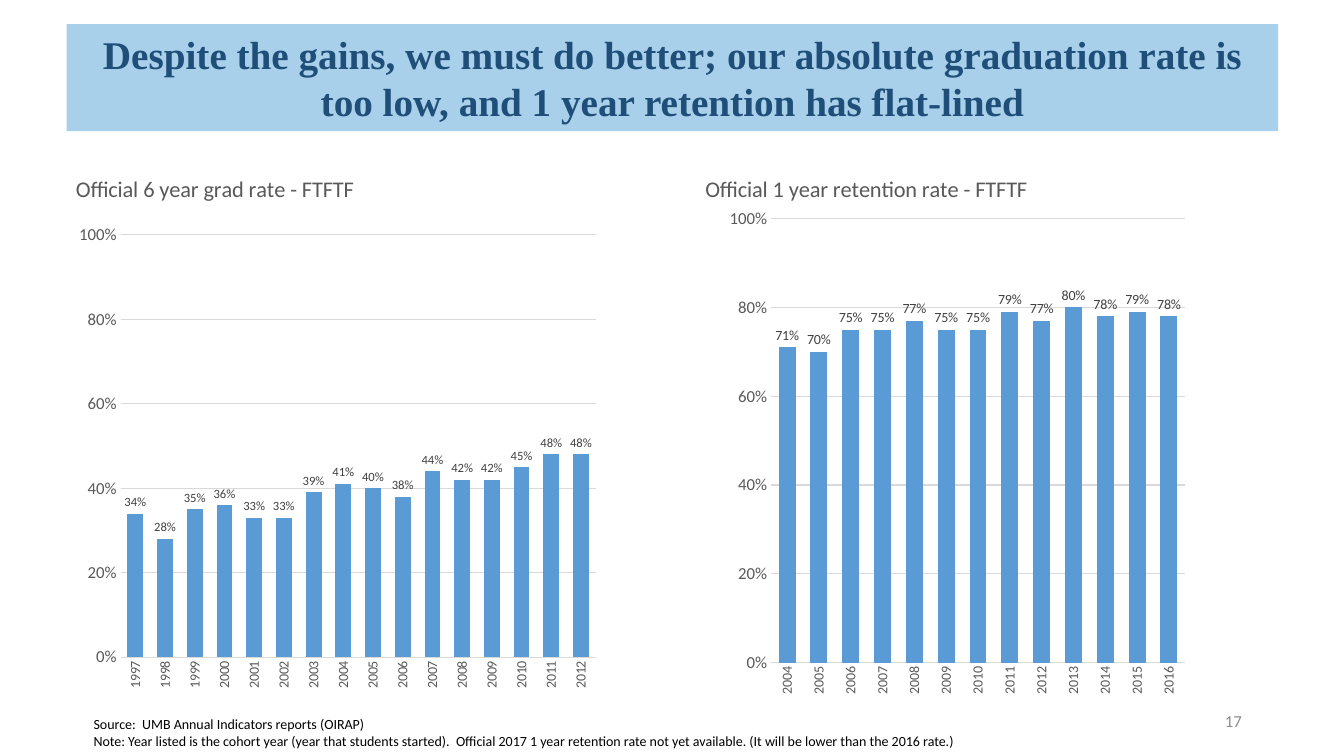
from dataclasses import dataclass

from lxml.etree import SubElement
from pptx import Presentation
from pptx.chart.chart import Chart
from pptx.chart.data import CategoryChartData
from pptx.dml.color import RGBColor
from pptx.enum.chart import XL_CHART_TYPE as ChartType
from pptx.enum.chart import XL_LABEL_POSITION as LabelPosition
from pptx.enum.chart import XL_TICK_MARK as TickMark
from pptx.enum.text import MSO_ANCHOR as Anchor
from pptx.enum.text import MSO_AUTO_SIZE as AutoSize
from pptx.enum.text import PP_ALIGN as Align
from pptx.oxml.ns import qn
from pptx.slide import Slide
from pptx.text.text import Font, TextFrame
from pptx.util import Inches, Pt

BAND = RGBColor(0xA9, 0xD0, 0xEA)
NAVY = RGBColor(0x1F, 0x4E, 0x79)
BAR = RGBColor(0x5B, 0x9B, 0xD5)
GRID = RGBColor(0xD9, 0xD9, 0xD9)
AXIS_GRAY = RGBColor(0x59, 0x59, 0x59)
LABEL_GRAY = RGBColor(0x40, 0x40, 0x40)
NUMBER_GRAY = RGBColor(0x8C, 0x8C, 0x8C)
BLACK = RGBColor(0, 0, 0)

BODY_FONT = "Calibri"
TITLE_FONT = "Times New Roman"
CELL = Inches(0.1)
COLUMNS, ROWS = 133.33, 75


@dataclass(frozen=True)
class Area:
    column: float
    row: float
    columns: float
    rows: float

    def lengths(self) -> tuple[int, int, int, int]:
        return tuple(round(n * CELL) for n in (self.column, self.row, self.columns, self.rows))


@dataclass(frozen=True)
class RateChart:
    title: str
    area: Area
    plot: tuple[float, float, float, float]
    first_year: int
    percents: list[int]
    label_size: int


RATE_CHARTS = [
    RateChart("Official 6 year grad rate - FTFTF", Area(6.6, 15.8, 53.6, 53.7),
              (0.1, 0.14, 0.88, 0.78), 1997,
              [34, 28, 35, 36, 33, 33, 39, 41, 40, 38, 44, 42, 42, 45, 48, 48], 9),
    RateChart("Official 1 year retention rate - FTFTF", Area(69, 15.8, 57.8, 53.7),
              (0.13, 0.11, 0.71, 0.82), 2004,
              [71, 70, 75, 75, 77, 75, 75, 79, 77, 80, 78, 79, 78], 10),
]


def format_font(font: Font, *, size: float, color: RGBColor,
                name: str = BODY_FONT, bold: bool = False) -> None:
    font.name, font.size, font.bold = name, Pt(size), bold
    font.color.rgb = color


def write_text(frame: TextFrame, text: str, *, size: float, color: RGBColor,
               name: str = BODY_FONT, bold: bool = False,
               align: Align = Align.LEFT, anchor: Anchor = Anchor.TOP) -> None:
    frame.text = text
    frame.word_wrap = True
    frame.auto_size = AutoSize.NONE
    frame.vertical_anchor = anchor
    for para in frame.paragraphs:
        para.alignment = align
        for span in para.runs:
            format_font(span.font, size=size, color=color, name=name, bold=bold)


def add_text(page: Slide, area: Area, text: str, **style) -> None:
    box = page.shapes.add_textbox(*area.lengths())
    write_text(box.text_frame, text, **style)


def place_chart_part(part, index: int, **shares) -> None:
    for old in part.findall(qn("c:layout")):
        part.remove(old)
    layout = SubElement(part, qn("c:layout"))
    manual = SubElement(layout, qn("c:manualLayout"))
    for key, value in shares.items():
        SubElement(manual, qn(f"c:{key}")).set("val", str(value))
    part.insert(index, layout)


def format_axes(chart: Chart) -> None:
    years, rates = chart.category_axis, chart.value_axis
    for axis, size in ((years, 10), (rates, 12)):
        axis.major_tick_mark = axis.minor_tick_mark = TickMark.NONE
        format_font(axis.tick_labels.font, size=size, color=AXIS_GRAY)
    rates.minimum_scale, rates.maximum_scale, rates.major_unit = 0, 1, 0.2
    rates.tick_labels.number_format = "0%"
    rates.tick_labels.number_format_is_linked = False
    rates.format.line.fill.background()
    for line in (years.format.line, rates.major_gridlines.format.line):
        line.color.rgb = GRID
        line.width = Pt(0.75)
    for body in chart.element.xpath(".//c:catAx/c:txPr/a:bodyPr"):
        body.set("rot", "-5400000")
        body.set("vert", "horz")


def add_rate_chart(page: Slide, rate: RateChart) -> None:
    data = CategoryChartData(number_format="0%")
    data.categories = [str(rate.first_year + n) for n in range(len(rate.percents))]
    data.add_series("Series 1", [percent / 100 for percent in rate.percents])
    chart = page.shapes.add_chart(ChartType.COLUMN_CLUSTERED, *rate.area.lengths(), data).chart
    format_font(chart.font, size=10, color=BLACK)
    chart.has_legend = False
    format_axes(chart)

    title = chart.chart_title.text_frame
    title.text = rate.title
    format_font(title.paragraphs[0].runs[0].font, size=16, color=AXIS_GRAY)
    place_chart_part(chart.element.xpath("c:chart/c:title")[0], 1,
                     xMode="edge", yMode="edge", x=0.01, y=0.02)
    x, y, w, h = rate.plot
    place_chart_part(chart.element.xpath("c:chart/c:plotArea")[0], 0,
                     layoutTarget="inner", xMode="edge", yMode="edge", x=x, y=y, w=w, h=h)

    plot = chart.plots[0]
    plot.gap_width = 88
    plot.vary_by_categories = False
    bars = plot.series[0].format.fill
    bars.solid()
    bars.fore_color.rgb = BAR
    plot.has_data_labels = True
    labels = plot.data_labels
    labels.show_value = True
    labels.position = LabelPosition.OUTSIDE_END
    labels.number_format = "0%"
    labels.number_format_is_linked = False
    format_font(labels.font, size=rate.label_size, color=LABEL_GRAY)


def add_title(page: Slide, area: Area, text: str) -> None:
    title = page.shapes.title
    title.left, title.top, title.width, title.height = area.lengths()
    title.fill.solid()
    title.fill.fore_color.rgb = BAND
    write_text(title.text_frame, text, size=28, color=NAVY, name=TITLE_FONT,
               bold=True, align=Align.CENTER, anchor=Anchor.MIDDLE)


def main() -> None:
    deck = Presentation()
    deck.slide_width, deck.slide_height = round(COLUMNS * CELL), ROWS * CELL
    page = deck.slides.add_slide(deck.slide_layouts.get_by_name("Title Only"))
    add_title(page, Area(6.6, 2.4, 120.2, 10.6),
              "Despite the gains, we must do better; our absolute graduation rate is "
              "too low, and 1 year retention has flat-lined")
    for rate in RATE_CHARTS:
        add_rate_chart(page, rate)
    add_text(page, Area(8.3, 70.5, 100.3, 4.4),
             "Source:  UMB Annual Indicators reports (OIRAP)\n"
             "Note: Year listed is the cohort year (year that students started).  "
             "Official 2017 1 year retention rate not yet available. "
             "(It will be lower than the 2016 rate.)", size=10, color=BLACK)
    add_text(page, Area(94.2, 69.5, 30, 4), "17", size=12, color=NUMBER_GRAY,
             align=Align.RIGHT, anchor=Anchor.MIDDLE)
    deck.save("out.pptx")


if __name__ == "__main__":
    main()
